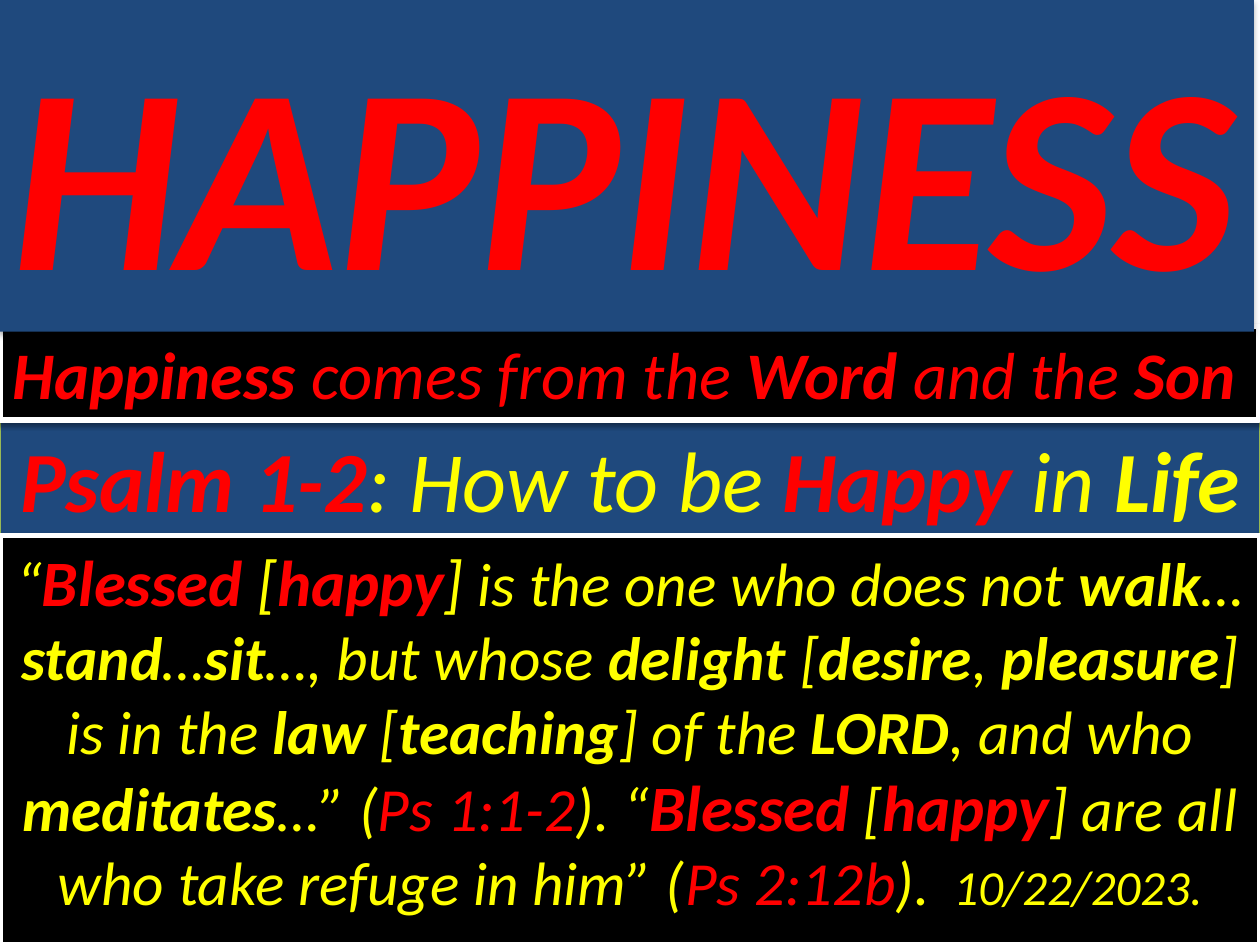
import pptx
import pptx.util
import pptx.dml.color
import pptx.enum.text
import pptx.oxml.ns
import lxml.etree

Pt = pptx.util.Pt
RGBColor = pptx.dml.color.RGBColor
PP_ALIGN = pptx.enum.text.PP_ALIGN
ANCHOR = pptx.enum.text.MSO_ANCHOR
SIZE = pptx.enum.text.MSO_AUTO_SIZE
qn = pptx.oxml.ns.qn

RED = RGBColor(0xFF, 0x00, 0x00)
YELLOW = RGBColor(0xFF, 0xFF, 0x00)
BLUE = RGBColor(0x1F, 0x49, 0x7D)
GREEN = RGBColor(0x98, 0xB9, 0x55)
BLACK = RGBColor(0x00, 0x00, 0x00)
WHITE = RGBColor(0xFF, 0xFF, 0xFF)
FONT = "Calibri"


def shade(shape, alpha, dist):
    """Give the shape a soft shadow straight below it."""
    shape.shadow.inherit = False
    effects = shape._element.spPr.find(qn("a:effectLst"))
    outer = lxml.etree.SubElement(
        effects, qn("a:outerShdw"), blurRad=str(Pt(3.15)),
        dist=str(Pt(dist)), dir="5400000", rotWithShape="0")
    tint = lxml.etree.SubElement(outer, qn("a:srgbClr"), val=str(BLACK))
    lxml.etree.SubElement(tint, qn("a:alpha"), val=str(alpha * 1000))


def style(shape, box, fill, line=None, width=0, alpha=38, dist=1.6):
    """Place the shape in its box and set its fill, line and shadow."""
    shape.left, shape.top, shape.width, shape.height = map(Pt, box)
    shape.fill.solid()
    shape.fill.fore_color.rgb = fill
    if line is None:
        shape.line.fill.background()
    else:
        shape.line.color.rgb = line
        shape.line.width = Pt(width)
    shade(shape, alpha, dist)


def write(shape, runs, align, wrap, fit, anchor):
    """Write one paragraph of (text, size, colour, bold) runs."""
    frame = shape.text_frame
    frame.word_wrap = wrap
    frame.auto_size = fit
    frame.vertical_anchor = anchor
    para = frame.paragraphs[0]
    para.alignment = align
    for text, size, color, bold in runs:
        run = para.add_run()
        run.text = text
        font = run.font
        font.name, font.size = FONT, Pt(size)
        font.bold, font.italic = bold, True
        font.color.rgb = color


def add_title(slide, box):
    """Fill the title placeholder with the psalm's heading."""
    title = slide.shapes.title
    style(title, box, BLUE, GREEN, 0.75)
    runs = [
        ("Psalm 1-2", 49, RED, True),
        (": How to be ", 49, YELLOW, False),
        ("Happy", 49, RED, True),
        (" in ", 49, YELLOW, False),
        ("Life", 49, YELLOW, True),
    ]
    write(title, runs, PP_ALIGN.CENTER, True, SIZE.NONE, ANCHOR.MIDDLE)


def add_verse(slide, box):
    """Fill the subtitle placeholder with the quoted verses."""
    verse = slide.placeholders[1]
    style(verse, box, BLACK, WHITE, 3)

    def plain(text, size=35):
        return text, size, YELLOW, False

    def strong(text):
        return text, 35, YELLOW, True

    def bless(text):
        return text, 37, RED, True

    def cite(text):
        return text, 35, RED, False

    runs = [
        plain("“"), bless("Blessed"), plain(" [", 37), bless("happy"),
        plain("]", 37), plain(" is the one who does not "),
        strong("walk"), plain("… "), strong("stand"), plain("…"),
        strong("sit"), plain("…, but whose "), strong("delight"),
        plain(" ["), strong("desire"), plain(", "), strong("pleasure"),
        plain("] is in the "), strong("law"), plain(" ["),
        strong("teaching"), plain("] of the "), strong("LORD"),
        plain(", and who "), strong("meditates"), plain("…” ("),
        cite("Ps 1:1-2"), plain("). “"), bless("Blessed"), plain(" ["),
        bless("happy"), plain("] are all who take refuge in him” ("),
        cite("Ps 2:12b"), plain(")."), plain(" ", 32),
        plain(" 10/22/2023.", 28),
    ]
    write(verse, runs, PP_ALIGN.CENTER, True, SIZE.NONE, ANCHOR.TOP)


def add_motto(slide, box):
    """Add the black strip with the one-line message."""
    motto = slide.shapes.add_textbox(*map(Pt, box))
    style(motto, box, BLACK, WHITE, 3)
    parts = ["Happiness", " comes from the ", "Word", " and the ", "Son"]
    runs = [(text, 38, RED, i % 2 == 0) for i, text in enumerate(parts)]
    write(motto, runs, PP_ALIGN.LEFT, False, SIZE.SHAPE_TO_FIT_TEXT, ANCHOR.TOP)


def add_banner(slide, box):
    """Add the blue banner with the large headline."""
    banner = slide.shapes.add_textbox(*map(Pt, box))
    style(banner, box, BLUE, alpha=35, dist=1.8)
    runs = [("HAPPINESS", 151, RED, True)]
    write(banner, runs, PP_ALIGN.LEFT, False, SIZE.SHAPE_TO_FIT_TEXT, ANCHOR.TOP)


def main():
    """Build the slide and save it."""
    deck = pptx.Presentation()
    deck.slide_width, deck.slide_height = Pt(720), Pt(540)
    slide = deck.slides.add_slide(deck.slide_layouts[0])
    add_title(slide, (0, 240, 720, 66))
    add_verse(slide, (0, 306, 720, 234))
    add_motto(slide, (0, 186.5, 719.5, 53.5))
    add_banner(slide, (0, 0, 716.5, 189.5))
    deck.save("out.pptx")


if __name__ == "__main__":
    main()
